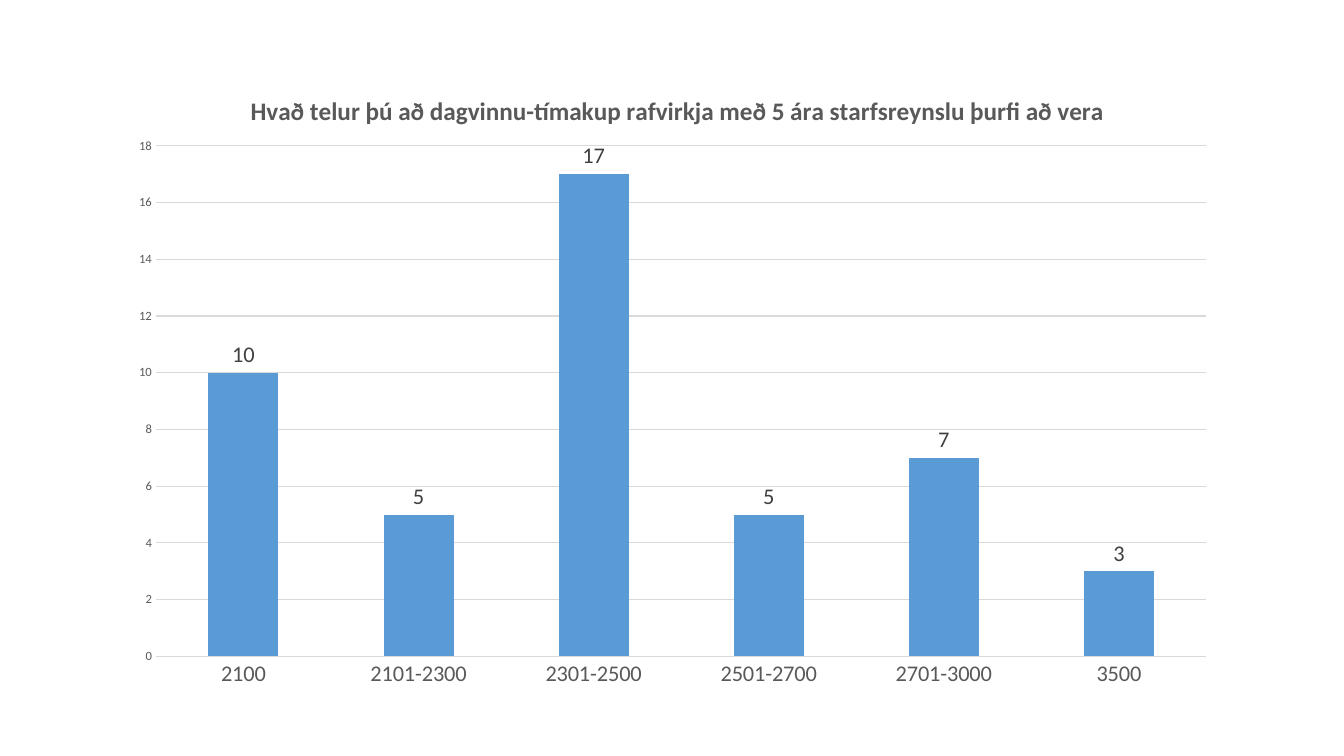
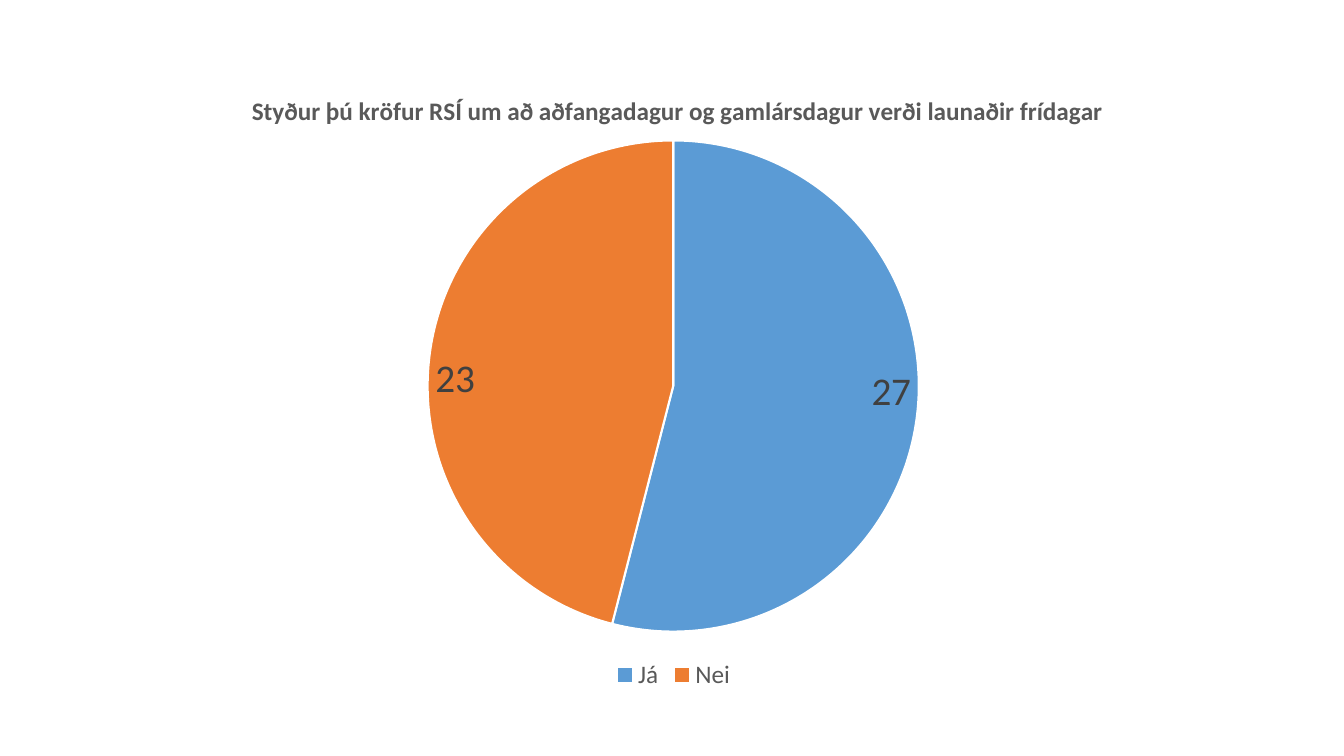
from lxml import etree
from pptx import Presentation
from pptx.chart.data import CategoryChartData
from pptx.dml.color import RGBColor
from pptx.enum.chart import (XL_CHART_TYPE as Kind, XL_LABEL_POSITION as LabelPos,
                             XL_LEGEND_POSITION as LegendPos, XL_TICK_MARK as Tick)
from pptx.oxml.ns import qn
from pptx.util import Pt

FONT = "Calibri"
BLUE, ORANGE, WHITE = "5B9BD5", "ED7D31", "FFFFFF"
TEXT, LABEL, GRID = "595959", "404040", "D9D9D9"

# Frames are left, top, width, height in points; layouts are shares of the chart.
WAGE = dict(
    kind=Kind.COLUMN_CLUSTERED,
    title="Hvað telur þú að dagvinnu-tímakup rafvirkja með 5 ára starfsreynslu þurfi að vera",
    data={"2100": 10, "2101-2300": 5, "2301-2500": 17,
          "2501-2700": 5, "2701-3000": 7, "3500": 3},
    frame=(83.5, 44, 795, 456),
    title_at=dict(x=0.116, y=0.042),
    plot_at=dict(x=0.035, y=0.132, w=0.944, h=0.80),
    label_size=16, label_pos=LabelPos.OUTSIDE_END)
HOLIDAYS = dict(
    kind=Kind.PIE,
    title="Styður þú kröfur RSÍ um að aðfangadagur og gamlársdagur verði launaðir frídagar",
    data={"Já": 27, "Nei": 23},
    frame=(83.5, 44.6, 795.6, 452),
    title_at=dict(x=0.117, y=0.042),
    plot_at=dict(x=0.279, y=0.123, w=0.441, h=0.777),
    label_size=28, label_pos=LabelPos.INSIDE_END)


def rgb(color):
    return RGBColor.from_string(color)


def set_font(font, size, color, bold=False):
    font.name, font.size, font.bold = FONT, Pt(size), bold
    font.color.rgb = rgb(color)


def set_layout(parent, index, shares, inner=False):
    """Place a chart part by shares of the chart's width and height."""
    for old in parent.findall(qn("c:layout")):
        parent.remove(old)
    layout = etree.Element(qn("c:layout"))
    manual = etree.SubElement(layout, qn("c:manualLayout"))
    values = {"layoutTarget": "inner"} if inner else {}
    values |= {"xMode": "edge", "yMode": "edge"} | shares
    for tag, value in values.items():
        etree.SubElement(manual, qn("c:" + tag)).set("val", str(value))
    parent.insert(index, layout)


def add_survey_chart(prs, survey):
    s = prs.slides.add_slide(prs.slide_layouts[6])
    data = CategoryChartData()
    data.categories = list(survey["data"])
    data.add_series("Series 1", list(survey["data"].values()))
    frame = [Pt(v) for v in survey["frame"]]
    chart = s.shapes.add_chart(survey["kind"], *frame, data).chart
    set_font(chart.font, 10, "000000")
    chart.has_legend = False

    chart.has_title = True
    tf = chart.chart_title.text_frame
    tf.text = survey["title"]
    set_font(tf.paragraphs[0].runs[0].font, 18, TEXT, bold=True)
    chart.chart_title.include_in_layout = False
    set_layout(chart.chart_title._element, 1, survey["title_at"])
    plot = chart.plots[0]
    set_layout(plot._element.getparent(), 0, survey["plot_at"], inner=True)

    plot.has_data_labels = True
    labels = plot.data_labels
    labels.show_value = True
    labels.show_percentage = False
    labels.position = survey["label_pos"]
    set_font(labels.font, survey["label_size"], LABEL)
    return chart


def style_columns(chart):
    plot = chart.plots[0]
    plot.gap_width = 150
    plot.vary_by_categories = False
    fill = plot.series[0].format.fill
    fill.solid()
    fill.fore_color.rgb = rgb(BLUE)
    for axis, size in ((chart.category_axis, 16), (chart.value_axis, 9)):
        axis.major_tick_mark = axis.minor_tick_mark = Tick.NONE
        axis.format.line.fill.background()
        set_font(axis.tick_labels.font, size, TEXT)
    values = chart.value_axis
    values.minimum_scale, values.maximum_scale, values.major_unit = 0, 18, 2
    values.has_major_gridlines = True
    line = values.major_gridlines.format.line
    line.color.rgb, line.width = rgb(GRID), Pt(0.75)


def style_pie(chart):
    plot = chart.plots[0]
    plot.vary_by_categories = True
    for i, color in enumerate((BLUE, ORANGE)):
        fmt = plot.series[0].points[i].format
        fmt.fill.solid()
        fmt.fill.fore_color.rgb = rgb(color)
        fmt.line.color.rgb, fmt.line.width = rgb(WHITE), Pt(1.5)
    chart.has_legend = True
    chart.legend.position = LegendPos.BOTTOM
    chart.legend.include_in_layout = False
    set_font(chart.legend.font, 18, TEXT)


def main():
    prs = Presentation()
    prs.slide_width, prs.slide_height = Pt(960), Pt(540)
    style_columns(add_survey_chart(prs, WAGE))
    style_pie(add_survey_chart(prs, HOLIDAYS))
    prs.save("out.pptx")


if __name__ == "__main__":
    main()
